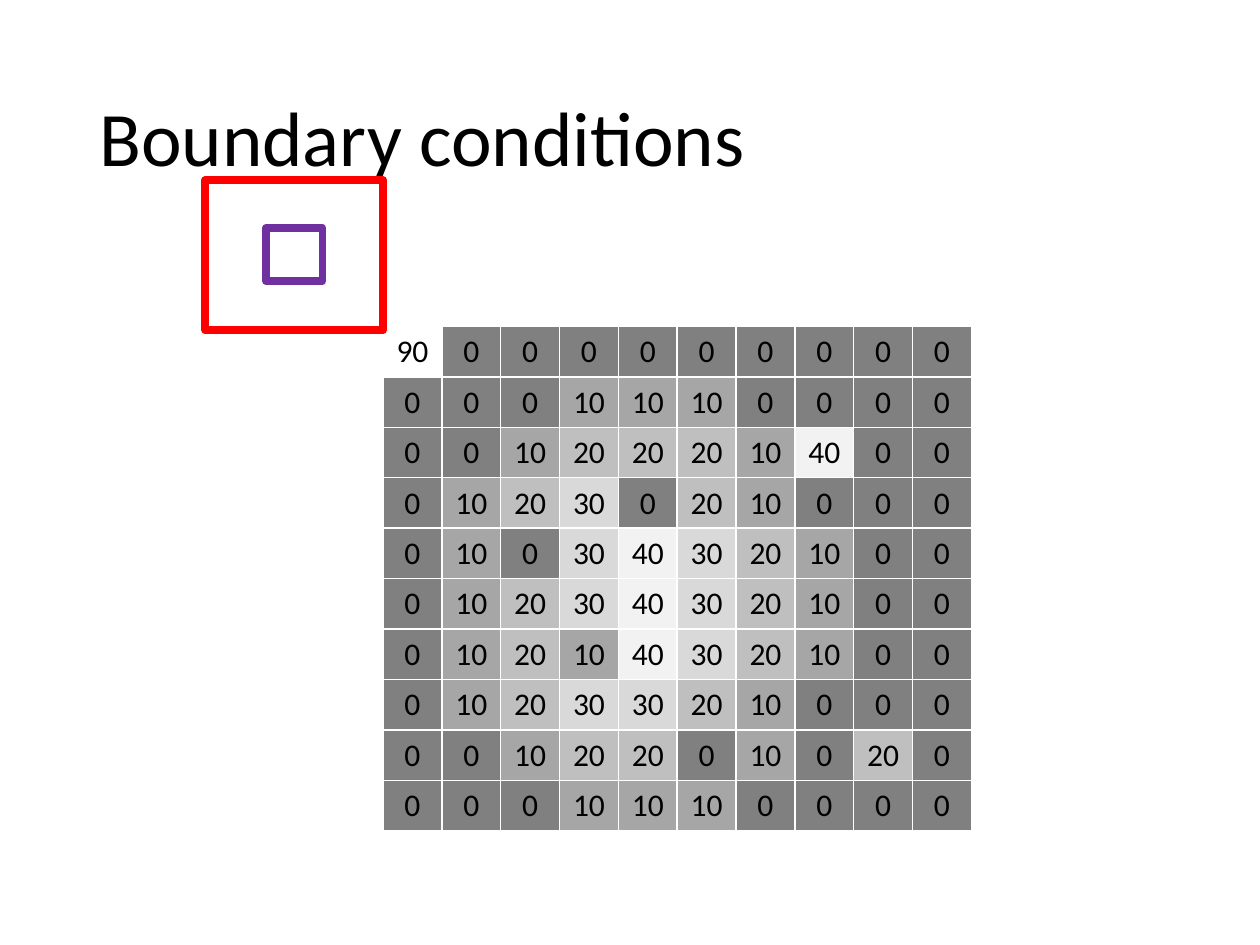
"""Build the boundary conditions slide: a pixel grid with a filter window beyond its corner."""
from lxml import etree
from pptx import Presentation
from pptx.dml.color import RGBColor
from pptx.enum.shapes import MSO_SHAPE
from pptx.enum.text import MSO_ANCHOR, PP_ALIGN
from pptx.oxml.ns import qn
from pptx.util import Inches, Pt

RECTANGLE = MSO_SHAPE.RECTANGLE
MIDDLE = MSO_ANCHOR.MIDDLE
CENTER = PP_ALIGN.CENTER
LEFT = PP_ALIGN.LEFT

FONT = "Calibri"
BLACK = RGBColor(0x00, 0x00, 0x00)
WHITE = RGBColor(0xFF, 0xFF, 0xFF)
RED = RGBColor(0xFF, 0x00, 0x00)
PURPLE = RGBColor(0x70, 0x30, 0xA0)
SHADES = {
    0: RGBColor(0x80, 0x80, 0x80),
    10: RGBColor(0xA6, 0xA6, 0xA6),
    20: RGBColor(0xBF, 0xBF, 0xBF),
    30: RGBColor(0xD9, 0xD9, 0xD9),
    40: RGBColor(0xF2, 0xF2, 0xF2),
    90: WHITE,
}

TITLE = "Boundary conditions"
PIXELS = [
    [90, 0, 0, 0, 0, 0, 0, 0, 0, 0],
    [0, 0, 0, 10, 10, 10, 0, 0, 0, 0],
    [0, 0, 10, 20, 20, 20, 10, 40, 0, 0],
    [0, 10, 20, 30, 0, 20, 10, 0, 0, 0],
    [0, 10, 0, 30, 40, 30, 20, 10, 0, 0],
    [0, 10, 20, 30, 40, 30, 20, 10, 0, 0],
    [0, 10, 20, 10, 40, 30, 20, 10, 0, 0],
    [0, 10, 20, 30, 30, 20, 10, 0, 0, 0],
    [0, 0, 10, 20, 20, 0, 10, 0, 20, 0],
    [0, 0, 0, 10, 10, 10, 0, 0, 0, 0],
]
FRAMES = [
    ((2.11, 1.81, 0.45, 0.42), PURPLE),
    ((1.63, 1.43, 1.41, 1.19), RED),
]
GRID_LEFT, GRID_TOP, GRID_WIDTH = 3.04, 2.59, 4.67
ROW_HEIGHT = 0.38


def write(frame, text, size, align=LEFT, spacing=1.0):
    para = frame.paragraphs[0]
    para.alignment = align
    para.line_spacing = spacing
    span = para.add_run()
    span.text = text
    span.font.name = FONT
    span.font.size = Pt(size)
    span.font.color.rgb = BLACK


def add_title(page):
    box = page.shapes.add_textbox(Inches(0.69), Inches(0.4), Inches(8.62), Inches(1.45))
    box.text_frame.word_wrap = True
    box.text_frame.vertical_anchor = MIDDLE
    write(box.text_frame, TITLE, size=44, spacing=0.9)


def set_borders(cell, color, width):
    properties = cell._tc.get_or_add_tcPr()
    for index, side in enumerate(("lnL", "lnR", "lnT", "lnB")):
        line = etree.Element(qn(f"a:{side}"), w=str(Pt(width)))
        fill = etree.SubElement(line, qn("a:solidFill"))
        etree.SubElement(fill, qn("a:srgbClr"), val=str(color))
        properties.insert(index, line)


def add_grid(page):
    rows, columns = len(PIXELS), len(PIXELS[0])
    table = page.shapes.add_table(
        rows, columns, Inches(GRID_LEFT), Inches(GRID_TOP),
        Inches(GRID_WIDTH), Inches(rows * ROW_HEIGHT),
    ).table
    table.first_row = False
    table.horz_banding = False
    for row, values in enumerate(PIXELS):
        for column, value in enumerate(values):
            cell = table.cell(row, column)
            cell.fill.solid()
            cell.fill.fore_color.rgb = SHADES[value]
            set_borders(cell, WHITE, 1)
            write(cell.text_frame, str(value), size=18, align=CENTER)


def add_frame(page, bounds, color):
    frame = page.shapes.add_shape(RECTANGLE, *map(Inches, bounds))
    frame.shadow.inherit = False
    frame.fill.background()
    frame.line.color.rgb = color
    frame.line.width = Pt(4.5)


def main():
    deck = Presentation()
    deck.slide_width, deck.slide_height = Inches(10), Inches(7.5)
    page = deck.slides.add_slide(deck.slide_layouts[6])
    add_title(page)
    add_grid(page)
    for bounds, color in FRAMES:
        add_frame(page, bounds, color)
    deck.save("out.pptx")


if __name__ == "__main__":
    main()
